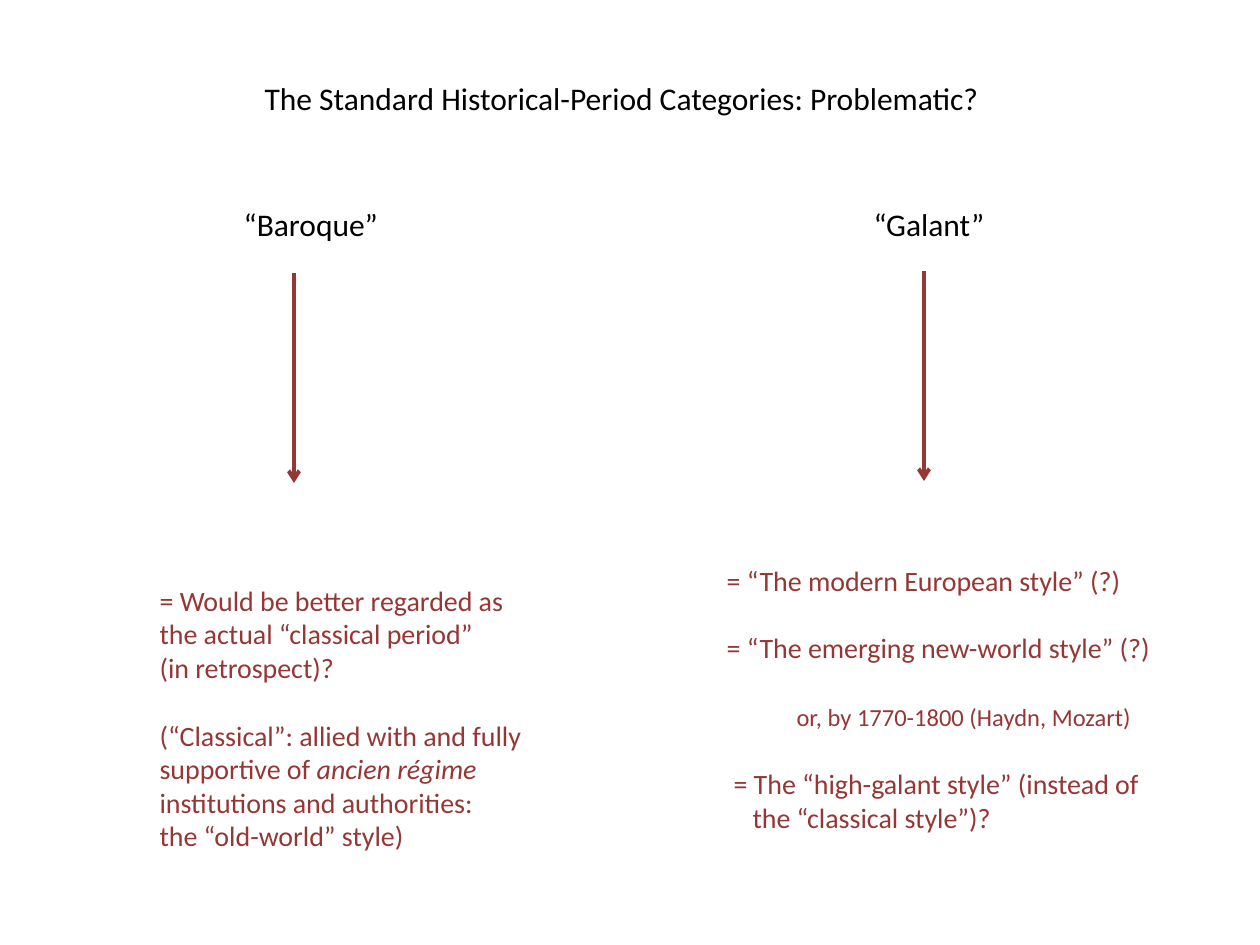
from lxml import etree
from pptx import Presentation
from pptx.dml.color import RGBColor
from pptx.enum.shapes import MSO_CONNECTOR
from pptx.enum.text import MSO_ANCHOR, MSO_AUTO_SIZE, PP_ALIGN
from pptx.oxml.ns import qn
from pptx.util import Pt

PX = 914400 // 126
STRAIGHT = MSO_CONNECTOR.STRAIGHT
TOP, LEFT, FIXED = MSO_ANCHOR.TOP, PP_ALIGN.LEFT, MSO_AUTO_SIZE.NONE
BLACK = RGBColor(0x00, 0x00, 0x00)
RED = RGBColor(0x95, 0x37, 0x35)
FONT = "Calibri"
GAP = 19.5  # one line of body text, in points

# A paragraph is (runs, size, indent in px, space before in points);
# a run is (text, italic).
def line(text, size=16, indent=0, before=0):
    return [(text, False)], size, indent, before


BAROQUE = [
    line("= Would be better regarded as the actual “classical period”"),
    line("(in retrospect)?"),
    ([("(“Classical”: allied with and fully supportive of ", False),
      ("ancien régime", True),
      (" institutions and authorities:", False)], 16, 0, GAP),
    line("the “old-world” style)"),
]
GALANT = [
    line("= “The modern European style” (?)"),
    line("= “The emerging new-world style” (?)", before=GAP),
    line("or, by 1770-1800 (Haydn, Mozart)", 14, 70, GAP + 2),
    line("= The “high-galant style” (instead of", 16, 7, GAP + 0.5),
    line("the “classical style”)?", 16, 26),
]
# Placeholder index, box in px, colour, paragraphs
TEXTS = [
    (0, (252, 73, 809, 50), BLACK,
     [line("The Standard Historical-Period Categories: Problematic?", 18)]),
    (1, (231, 199, 240, 50), BLACK, [line("“Baroque”", 18)]),
    (2, (147, 577, 400, 285), RED, BAROQUE),
    (3, (861, 199, 240, 50), BLACK, [line("“Galant”", 18)]),
    (4, (714, 557, 494, 314), RED, GALANT),
]
ARROWS = [(294, 273), (924, 271)]
REACH = 210


def fill(shape, box, color, paras):
    shape.left, shape.top, shape.width, shape.height = (n * PX for n in box)
    frame = shape.text_frame
    frame.word_wrap = True
    frame.auto_size = FIXED
    frame.vertical_anchor = TOP
    for i, (runs, size, indent, before) in enumerate(paras):
        para = frame.add_paragraph() if i else frame.paragraphs[0]
        para.alignment = LEFT
        para.space_before = Pt(before)
        props = para._p.get_or_add_pPr()
        props.set("marL", str(indent * PX))
        props.set("indent", "0")
        etree.SubElement(props, qn("a:buNone"))
        for text, italic in runs:
            run = para.add_run()
            run.text = text
            font = run.font
            font.name, font.size = FONT, Pt(size)
            font.bold, font.italic = False, italic
            font.color.rgb = color


def arrow(slide, x, y):
    link = slide.shapes.add_connector(
        STRAIGHT, x * PX, y * PX, x * PX, (y + REACH) * PX)
    link.line.color.rgb = RED
    link.line.width = Pt(2.25)
    tail = etree.SubElement(link.line._get_or_add_ln(), qn("a:tailEnd"))
    tail.set("type", "arrow")
    etree.SubElement(link._element.spPr, qn("a:effectLst"))


def main():
    deck = Presentation()
    deck.slide_width, deck.slide_height = 1260 * PX, 945 * PX
    slide = deck.slides.add_slide(deck.slide_layouts.get_by_name("Comparison"))
    holders = {h.placeholder_format.idx: h for h in slide.placeholders}
    for idx, box, color, paras in TEXTS:
        fill(holders[idx], box, color, paras)
    for x, y in ARROWS:
        arrow(slide, x, y)
    deck.save("out.pptx")


if __name__ == "__main__":
    main()
